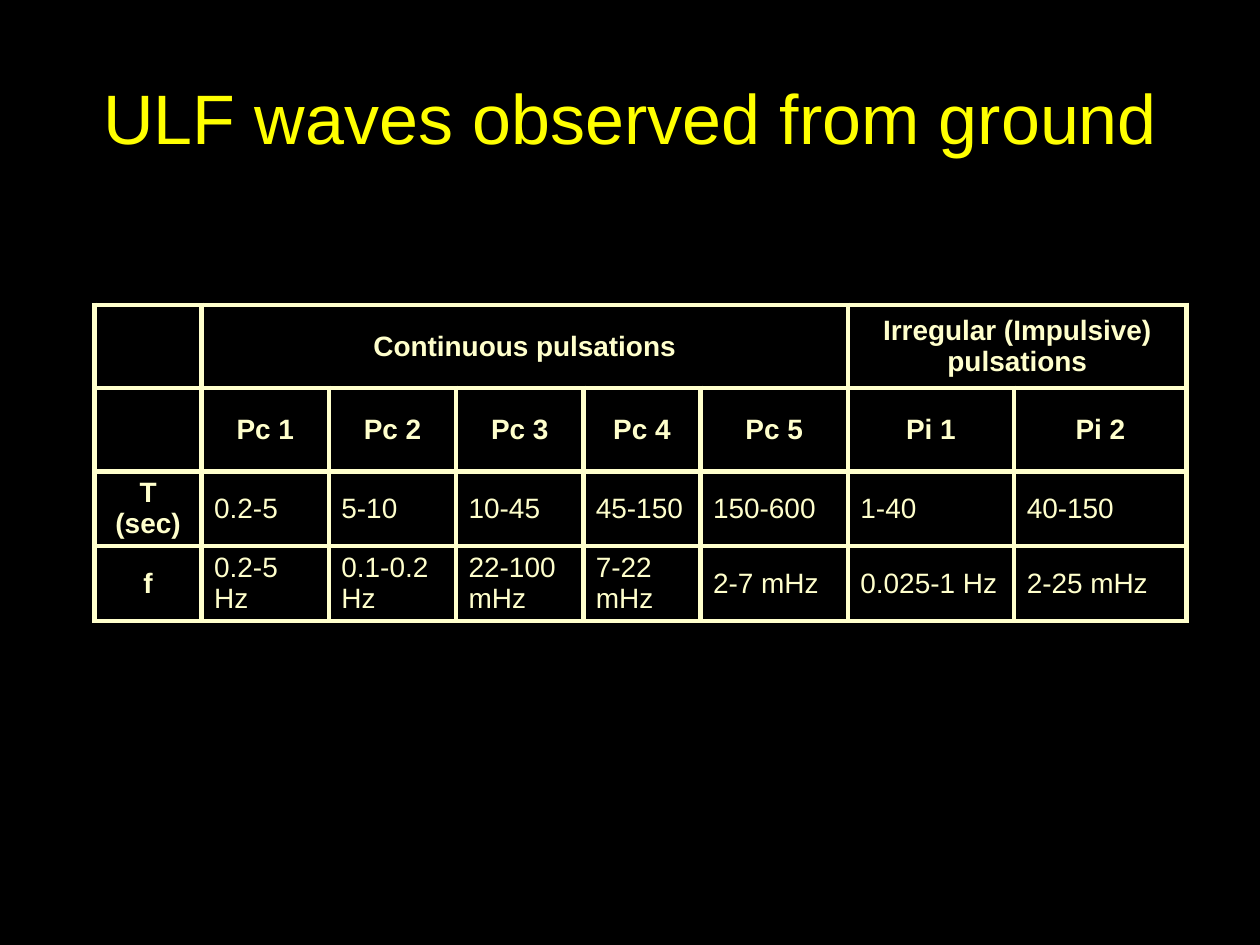
from dataclasses import dataclass

from lxml.etree import SubElement
from pptx import Presentation
from pptx.dml.color import RGBColor
from pptx.enum.text import MSO_ANCHOR as Anchor, PP_ALIGN as Align
from pptx.oxml.ns import qn
from pptx.util import Inches, Pt

FONT = "Arial"
BLACK, YELLOW, CREAM = "000000", "FFFF00", "FFFFCC"
BORDER_WIDTH = Pt(3)
TITLE_LAYOUT = 5

COLUMNS = [0.85, 1.01, 1.01, 1.01, 0.93, 1.17, 1.32, 1.37]
ROWS = [0.66, 0.66, 0.59, 0.59]


@dataclass
class Entry:
    row: int
    column: int
    text: str
    heading: bool = False
    columns: int = 1


GROUPS = [
    Entry(0, 1, "Continuous pulsations", True, 5),
    Entry(0, 6, "Irregular (Impulsive) pulsations", True, 2),
]
BODY = [
    ["", "Pc 1", "Pc 2", "Pc 3", "Pc 4", "Pc 5", "Pi 1", "Pi 2"],
    ["T (sec)", "0.2-5", "5-10", "10-45", "45-150", "150-600", "1-40", "40-150"],
    ["f", "0.2-5 Hz", "0.1-0.2 Hz", "22-100 mHz", "7-22 mHz", "2-7 mHz",
     "0.025-1 Hz", "2-25 mHz"],
]


def color(value: str) -> RGBColor:
    return RGBColor.from_string(value)


def style_text(frame, size: float, tint: str, bold: bool, align: Align) -> None:
    for para in frame.paragraphs:
        para.alignment = align
        for span in para.runs:
            span.font.name = FONT
            span.font.size = Pt(size)
            span.font.bold = bold
            span.font.color.rgb = color(tint)


def style_cell(cell) -> None:
    """Draw all four borders, then the fill that must follow them."""
    properties = cell._tc.get_or_add_tcPr()
    for side in ("a:lnL", "a:lnR", "a:lnT", "a:lnB"):
        line = SubElement(properties, qn(side), w=str(BORDER_WIDTH))
        fill = SubElement(line, qn("a:solidFill"))
        SubElement(fill, qn("a:srgbClr"), val=CREAM)
    cell.fill.background()
    cell.vertical_anchor = Anchor.MIDDLE


def write_entry(table, entry: Entry) -> None:
    cell = table.cell(entry.row, entry.column)
    if entry.columns > 1:
        cell.merge(table.cell(entry.row, entry.column + entry.columns - 1))
    cell.text_frame.text = entry.text
    align = Align.CENTER if entry.heading else Align.LEFT
    style_text(cell.text_frame, 16, CREAM, entry.heading, align)


def add_wave_table(page) -> None:
    frame = page.shapes.add_table(
        len(ROWS), len(COLUMNS), Inches(0.75), Inches(2.42),
        Inches(sum(COLUMNS)), Inches(sum(ROWS)))
    table = frame.table
    table.first_row = table.horz_banding = False
    for column, width in zip(table.columns, COLUMNS):
        column.width = Inches(width)
    for row, height in zip(table.rows, ROWS):
        row.height = Inches(height)
    for cell in table.iter_cells():
        style_cell(cell)

    # The first body row and the first column are headings
    entries = GROUPS + [
        Entry(r, c, text, r == 1 or c == 0)
        for r, texts in enumerate(BODY, start=1)
        for c, text in enumerate(texts) if text
    ]
    for entry in entries:
        write_entry(table, entry)


def main() -> None:
    deck = Presentation()
    deck.slide_width, deck.slide_height = Inches(10), Inches(7.5)
    page = deck.slides.add_slide(deck.slide_layouts[TITLE_LAYOUT])
    page.background.fill.solid()
    page.background.fill.fore_color.rgb = color(BLACK)

    # Title
    title = page.shapes.title
    title.left, title.top = int(deck.slide_width * 0.05), int(deck.slide_height * 0.04)
    title.width, title.height = int(deck.slide_width * 0.9), Inches(1.25)
    title.text_frame.text = "ULF waves observed from ground"
    title.text_frame.vertical_anchor = Anchor.MIDDLE
    style_text(title.text_frame, 40, YELLOW, False, Align.CENTER)

    # Pulsation classes with their periods and frequencies
    add_wave_table(page)
    deck.save("out.pptx")


if __name__ == "__main__":
    main()
